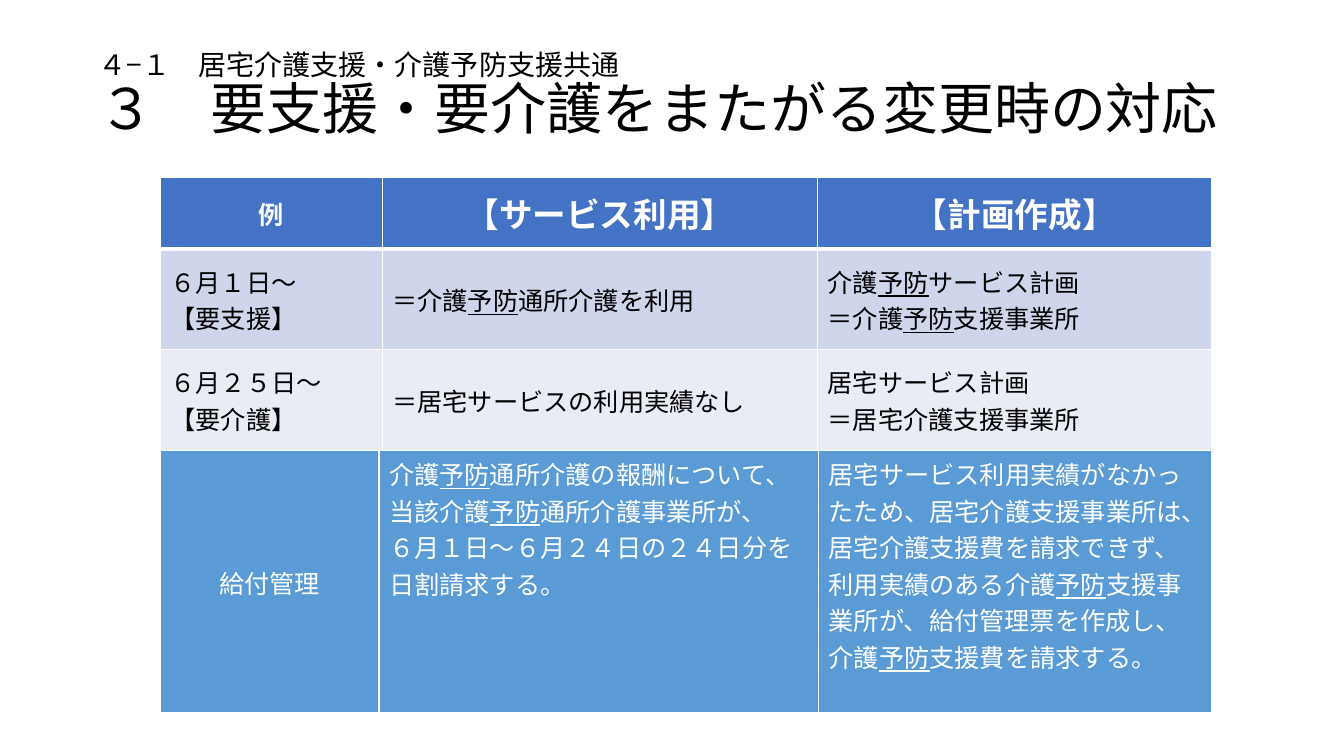
from dataclasses import dataclass

import pptx
import pptx.dml.color
import pptx.enum.text
import pptx.oxml
import pptx.oxml.ns
import pptx.slide
import pptx.table
import pptx.text.text
import pptx.util

Inches = pptx.util.Inches
Pt = pptx.util.Pt
RGBColor = pptx.dml.color.RGBColor
Align = pptx.enum.text.PP_ALIGN
Anchor = pptx.enum.text.MSO_ANCHOR

WHITE = RGBColor(0xFF, 0xFF, 0xFF)
BLACK = RGBColor(0x00, 0x00, 0x00)
HEADER_BLUE = RGBColor(0x44, 0x72, 0xC4)
BAND_DARK = RGBColor(0xCF, 0xD5, 0xEA)
BAND_LIGHT = RGBColor(0xE9, 0xEB, 0xF5)
BENEFIT_BLUE = RGBColor(0x5B, 0x9B, 0xD5)

UNDERLINED_WORD = "予防"
TABLE_LEFT = 1.59


@dataclass
class CellText:
    paragraphs: list[str]
    size: int = 18
    align: Align = Align.LEFT
    anchor: Anchor = Anchor.MIDDLE


@dataclass
class TableRow:
    height: float
    fill: RGBColor
    color: RGBColor
    cells: list[CellText]
    font_name: str = "Arial"
    bold: bool = False
    bottom_border: int = 1


@dataclass
class TableBlock:
    top: float
    column_widths: list[float]
    rows: list[TableRow]


EXAMPLE_TABLE = TableBlock(
    top=1.76,
    column_widths=[2.2, 4.32, 3.91],
    rows=[
        TableRow(0.71, HEADER_BLUE, WHITE, [
            CellText(["例"], align=Align.CENTER),
            CellText(["【サービス利用】"], 24, Align.CENTER),
            CellText(["【計画作成】"], 24, Align.CENTER),
        ], font_name="Calibri", bold=True, bottom_border=3),
        TableRow(1, BAND_DARK, BLACK, [
            CellText(["６月１日〜", "【要支援】"]),
            CellText(["＝介護予防通所介護を利用"]),
            CellText(["介護予防サービス計画", "＝介護予防支援事業所"]),
        ]),
        TableRow(1, BAND_LIGHT, BLACK, [
            CellText(["６月２５日〜", "【要介護】"]),
            CellText(["＝居宅サービスの利用実績なし"]),
            CellText(["居宅サービス計画", "＝居宅介護支援事業所"]),
        ]),
    ],
)

BENEFIT_TABLE = TableBlock(
    top=4.47,
    column_widths=[2.17, 4.36, 3.9],
    rows=[
        TableRow(2.61, BENEFIT_BLUE, WHITE, [
            CellText(["給付管理"], align=Align.CENTER),
            CellText([
                "介護予防通所介護の報酬について、当該介護予防通所介護事業所が、",
                "６月１日〜６月２４日の２４日分を日割請求する。",
            ], anchor=Anchor.TOP),
            CellText([
                "居宅サービス利用実績がなかったため、居宅介護支援事業所は、居宅介護支援費を請求できず、",
                "利用実績のある介護予防支援事業所が、給付管理票を作成し、介護予防支援費を請求する。",
            ], anchor=Anchor.TOP),
        ], bottom_border=3),
    ],
)


def add_title(slide: pptx.slide.Slide) -> None:
    title = slide.shapes.title
    title.left, title.top = Inches(0.88), Inches(0.32)
    title.width, title.height = Inches(11.5), Inches(1.27)
    frame = title.text_frame
    frame.word_wrap = True
    frame.auto_size = pptx.enum.text.MSO_AUTO_SIZE.NONE
    frame.vertical_anchor = Anchor.MIDDLE
    paragraph = frame.paragraphs[0]
    paragraph.alignment = Align.LEFT
    paragraph.line_spacing = 0.9
    paragraph.font.name = "Calibri"
    paragraph.font.size = Pt(20)
    paragraph.font.color.rgb = BLACK
    section = paragraph.add_run()
    section.text = "４−１　居宅介護支援・介護予防支援共通"
    section.font.size = Pt(20)
    paragraph.add_line_break()
    heading = paragraph.add_run()
    heading.text = "３　要支援・要介護をまたがる変更時の対応"
    heading.font.size = Pt(40)


def add_underlined_runs(paragraph: pptx.text.text._Paragraph, text: str) -> None:
    for index, part in enumerate(text.split(UNDERLINED_WORD)):
        if index:
            word = paragraph.add_run()
            word.text = UNDERLINED_WORD
            word.font.underline = True
        if part:
            paragraph.add_run().text = part


def set_borders(cell: pptx.table._Cell, bottom_width: int) -> None:
    properties = cell._tc.get_or_add_tcPr()
    namespace = pptx.oxml.ns.nsdecls("a")
    for side, width in (("L", 1), ("R", 1), ("T", 1), ("B", bottom_width)):
        properties.append(pptx.oxml.parse_xml(
            f'<a:ln{side} {namespace} w="{Pt(width)}"><a:solidFill>'
            f'<a:srgbClr val="{WHITE}"/></a:solidFill></a:ln{side}>'
        ))


def fill_cell(cell: pptx.table._Cell, content: CellText, row: TableRow) -> None:
    set_borders(cell, row.bottom_border)
    cell.fill.solid()
    cell.fill.fore_color.rgb = row.fill
    cell.vertical_anchor = content.anchor
    frame = cell.text_frame
    for index, text in enumerate(content.paragraphs):
        paragraph = frame.add_paragraph() if index else frame.paragraphs[0]
        paragraph.alignment = content.align
        paragraph.font.name = row.font_name
        paragraph.font.size = Pt(content.size)
        paragraph.font.bold = row.bold
        paragraph.font.color.rgb = row.color
        add_underlined_runs(paragraph, text)


def add_table_block(slide: pptx.slide.Slide, block: TableBlock) -> None:
    table = slide.shapes.add_table(
        len(block.rows), len(block.column_widths),
        Inches(TABLE_LEFT), Inches(block.top),
        Inches(sum(block.column_widths)),
        Inches(sum(row.height for row in block.rows)),
    ).table
    table.first_row = block.rows[0].bold
    table.horz_banding = False
    for column, width in zip(table.columns, block.column_widths):
        column.width = Inches(width)
    for table_row, row in zip(table.rows, block.rows):
        table_row.height = Inches(row.height)
        for cell, content in zip(table_row.cells, row.cells):
            fill_cell(cell, content, row)


def main() -> None:
    presentation = pptx.Presentation()
    presentation.slide_width = Inches(13.33)
    presentation.slide_height = Inches(7.5)
    slide = presentation.slides.add_slide(presentation.slide_layouts[5])
    add_title(slide)
    for block in (EXAMPLE_TABLE, BENEFIT_TABLE):
        add_table_block(slide, block)
    presentation.save("out.pptx")


if __name__ == "__main__":
    main()
